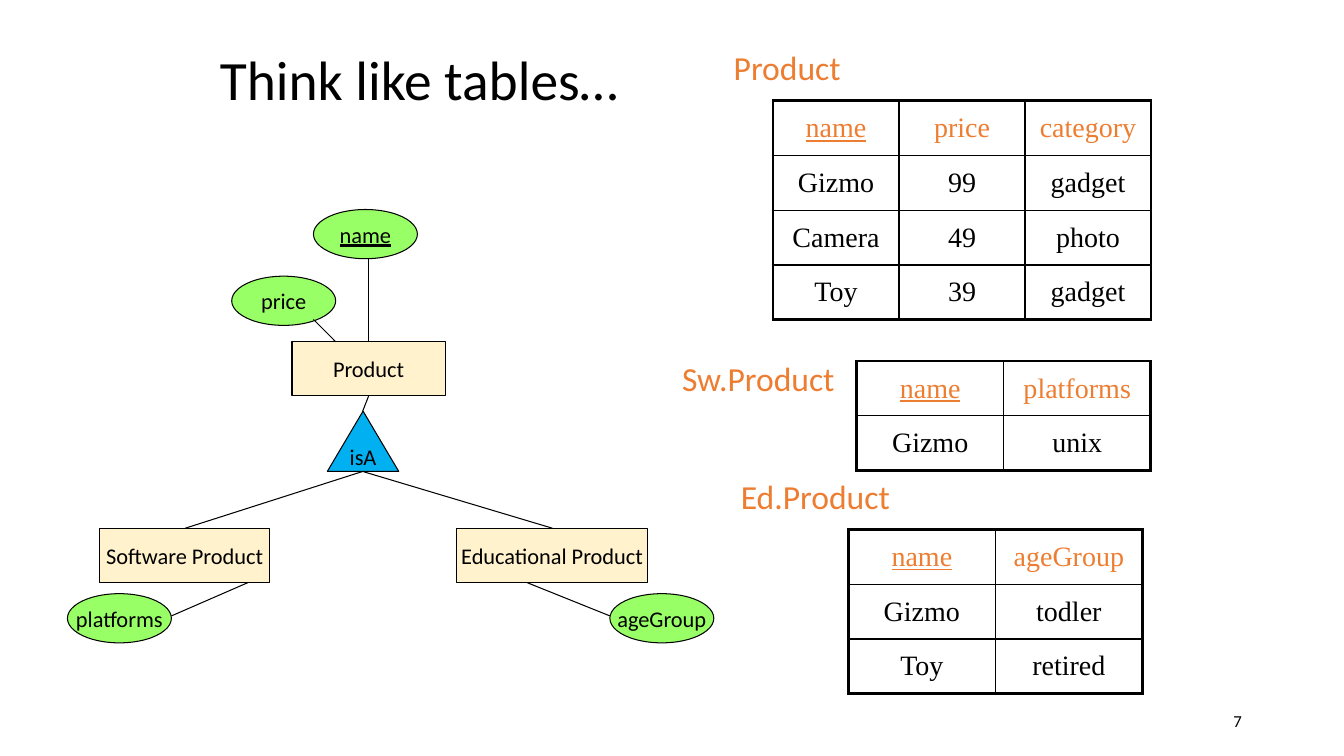
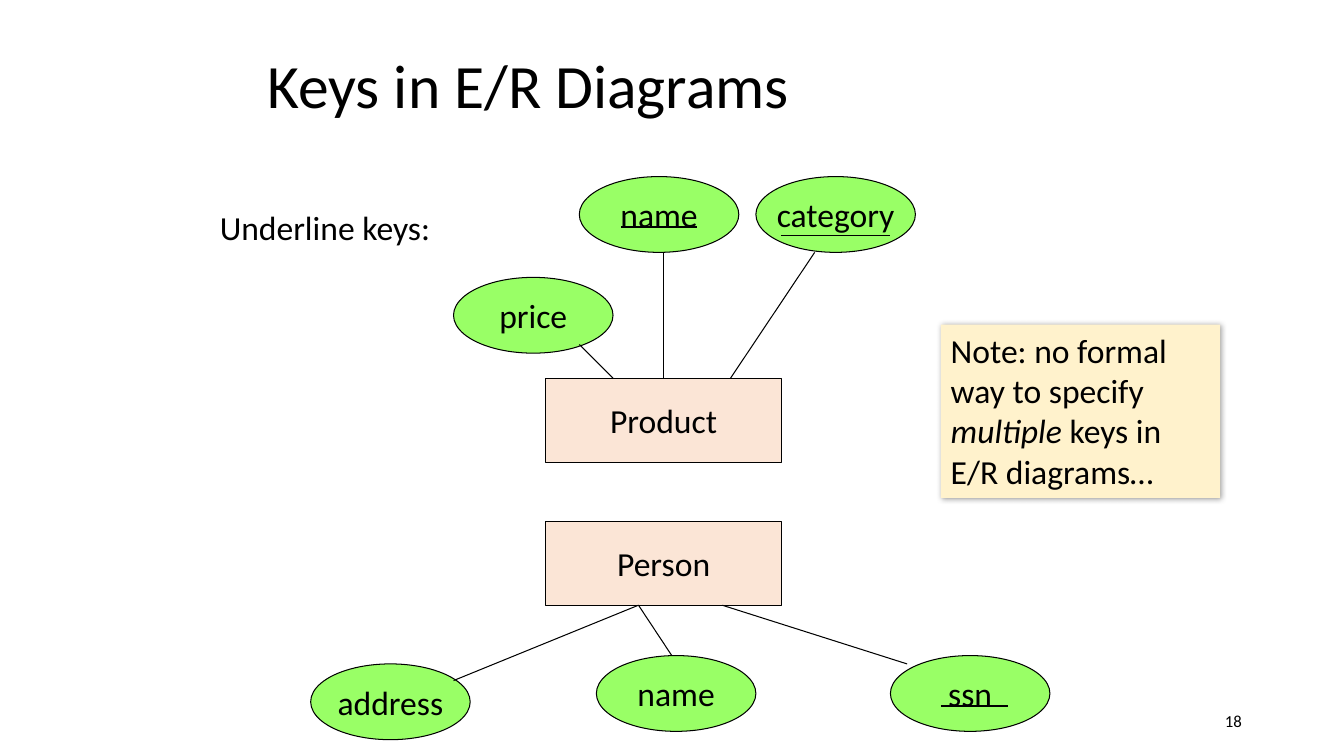
from dataclasses import dataclass

from lxml import etree
from pptx import Presentation
from pptx.dml.color import RGBColor
from pptx.enum.shapes import MSO_CONNECTOR, MSO_SHAPE
from pptx.enum.text import MSO_ANCHOR, PP_ALIGN
from pptx.oxml.ns import qn
from pptx.util import Cm, Pt

STRAIGHT = MSO_CONNECTOR.STRAIGHT
RECTANGLE, ELLIPSE, TRIANGLE = (
    MSO_SHAPE.RECTANGLE, MSO_SHAPE.OVAL, MSO_SHAPE.ISOSCELES_TRIANGLE)
LEFT, CENTER, RIGHT = PP_ALIGN.LEFT, PP_ALIGN.CENTER, PP_ALIGN.RIGHT
TOP, MIDDLE = MSO_ANCHOR.TOP, MSO_ANCHOR.MIDDLE


@dataclass(frozen=True)
class Theme:
    ink: str = "000000"
    accent: str = "ED7D31"
    attribute: str = "99FF66"
    cream: str = "FFF2CC"
    peach: str = "FBE5D6"
    relation: str = "00B0F0"
    font: str = "Calibri"
    table_font: str = "Times New Roman"
    title_size: float = 44
    small_title_size: float = 39.6
    label_size: float = 24
    table_size: float = 20
    node_size: float = 16
    page_number_size: float = 12
    thin_line: float = 0.75
    cell_line: float = 1
    frame_line: float = 2.25


THEME = Theme()


@dataclass(frozen=True)
class DiagramStyle:
    """Look of an E/R diagram; sizes are (width, height) in centimetres."""
    text_size: float
    entity_fill: str
    entity_size: tuple
    attribute_size: tuple
    relation_size: tuple = (1.8, 1.52)


COMPACT = DiagramStyle(THEME.node_size, THEME.cream, (3.86, 1.37), (2.62, 1.24))
LARGE = DiagramStyle(THEME.label_size, THEME.peach, (5.93, 2.12), (4.02, 1.91))


def lengths(*values):
    return [Cm(value) for value in values]


def write(frame, spans, size, align=LEFT, anchor=TOP, wrap=True,
          color=THEME.ink, font=THEME.font):
    """Fill a text frame with (text, font attributes) spans."""
    frame.word_wrap = wrap
    frame.vertical_anchor = anchor
    para = frame.paragraphs[0]
    para.alignment = align
    for text, extra in spans:
        span = para.add_run()
        span.text = text
        for name, value in {"name": font, "size": Pt(size), **extra}.items():
            setattr(span.font, name, value)
        span.font.color.rgb = RGBColor.from_string(color)
    return para


def add_text(page, box, text, size, **layout):
    frame = page.shapes.add_textbox(*lengths(*box)).text_frame
    return write(frame, [(text, {})], size, **layout), frame


def add_title(page, box, text, size, indent=0.25):
    para, frame = add_text(page, box, text, size, anchor=MIDDLE)
    para.line_spacing = 0.9
    frame.margin_left = Cm(indent)


def add_page_number(page, number):
    add_text(page, (23.93, 17.65, 7.62, 1.02), number, THEME.page_number_size,
             align=RIGHT, anchor=MIDDLE)


def add_label(page, box, text, color=THEME.accent):
    add_text(page, box, text, THEME.label_size, wrap=False, color=color)


def add_filled(page, kind, box, fill):
    shape = page.shapes.add_shape(kind, *lengths(*box))
    shape.shadow.inherit = False
    shape.fill.solid()
    shape.fill.fore_color.rgb = RGBColor.from_string(fill)
    shape.line.fill.background()
    return shape


def outline(line):
    line.color.rgb = RGBColor.from_string(THEME.ink)
    line.width = Pt(THEME.thin_line)


def add_diagram(page, origin, style, nodes, links):
    """Draw nodes (kind, text, x, y, options) and links (x1, y1, x2, y2)."""
    left, top = origin
    looks = {
        RECTANGLE: (style.entity_size, style.entity_fill),
        ELLIPSE: (style.attribute_size, THEME.attribute),
        TRIANGLE: (style.relation_size, THEME.relation),
    }
    for kind, text, x, y, options in nodes:
        (width, height), fill = looks[kind]
        width = options.get("width", width)
        shape = add_filled(page, kind, (left + x, top + y, width, height), fill)
        outline(shape.line)
        key = {"underline": True} if options.get("key") else {}
        write(shape.text_frame, [(text, key)], style.text_size,
              align=CENTER, anchor=MIDDLE, wrap=False)
    for x1, y1, x2, y2 in links:
        ends = lengths(left + x1, top + y1, left + x2, top + y2)
        link = page.shapes.add_connector(STRAIGHT, *ends)
        outline(link.line)
        etree.SubElement(link._element.spPr, qn("a:effectLst"))


def set_borders(cell, widths):
    """Draw cell edges, with widths in the order left, right, top, bottom."""
    properties = cell._tc.get_or_add_tcPr()
    for side, width in zip("LRTB", widths):
        edge = etree.SubElement(properties, qn(f"a:ln{side}"), w=str(Pt(width)))
        fill = etree.SubElement(edge, qn("a:solidFill"))
        etree.SubElement(fill, qn("a:srgbClr"), val=THEME.ink)


def add_relation_table(page, box, rows):
    """Table with a thick frame, an accent header and a key in column one."""
    left, top, width, row_height = box
    last_row, last_column = len(rows) - 1, len(rows[0]) - 1
    table = page.shapes.add_table(
        last_row + 1, last_column + 1,
        *lengths(left, top, width, row_height * len(rows))).table
    table.first_row = table.horz_banding = False
    for i, row in enumerate(rows):
        for j, text in enumerate(row):
            cell = table.cell(i, j)
            outer = (j == 0, j == last_column, i == 0, i == last_row)
            set_borders(cell, [THEME.frame_line if edge else THEME.cell_line
                               for edge in outer])
            cell.fill.background()
            cell.vertical_anchor = MIDDLE
            write(cell.text_frame, [(text, {"underline": i == j == 0})],
                  THEME.table_size, align=CENTER, anchor=MIDDLE,
                  color=THEME.ink if i else THEME.accent,
                  font=THEME.table_font)


def add_note(page, box, spans):
    note = add_filled(page, RECTANGLE, box, THEME.cream)
    effects = note._element.spPr.find(qn("a:effectLst"))
    shadow = etree.SubElement(effects, qn("a:outerShdw"), blurRad=str(Pt(4)),
                              dist=str(Pt(1)), dir="2700000", algn="tl")
    color = etree.SubElement(shadow, qn("a:srgbClr"), val=THEME.ink)
    etree.SubElement(color, qn("a:alpha"), val="40000")
    write(note.text_frame, spans, THEME.label_size)


def build_tables_page(page):
    add_page_number(page, "7")
    add_title(page, (5.29, 0.71, 13.34, 2.74), "Think like tables…",
              THEME.small_title_size)
    nodes = [
        (RECTANGLE, "Product", 5.66, 3.33, {}),
        (ELLIPSE, "name", 6.2, 0, {"key": True}),
        (ELLIPSE, "price", 4.14, 1.68, {}),
        (TRIANGLE, "isA", 6.55, 5.08, {}),
        (RECTANGLE, "Educational Product", 9.8, 8.03, {"width": 4.83}),
        (RECTANGLE, "Software Product", 0.81, 8.03, {"width": 4.29}),
        (ELLIPSE, "ageGroup", 13.67, 9.68, {}),
        (ELLIPSE, "platforms", 0, 9.68, {}),
    ]
    links = [
        (6.76, 3.33, 6.2, 2.77),
        (7.59, 3.33, 7.59, 1.24),
        (4.55, 9.4, 2.62, 10.24),
        (11.58, 9.4, 13.67, 10.24),
        (2.97, 8.03, 7.44, 6.6),
        (12.22, 8.03, 7.44, 6.6),
        (7.44, 5.08, 7.59, 4.7),
    ]
    add_diagram(page, (1.7, 5.28), COMPACT, nodes, links)
    relations = [
        ("Product", (18.24, 1.07, 3.23, 1.27), (19.48, 2.54, 9.53, 1.38),
         [("name", "price", "category"), ("Gizmo", "99", "gadget"),
          ("Camera", "49", "photo"), ("Toy", "39", "gadget")]),
        ("Sw.Product", (16.94, 8.89, 4.45, 1.27), (21.59, 9.1, 7.41, 1.38),
         [("name", "platforms"), ("Gizmo", "unix")]),
        ("Ed.Product", (18.42, 11.86, 4.29, 1.27), (21.38, 13.34, 7.41, 1.38),
         [("name", "ageGroup"), ("Gizmo", "todler"), ("Toy", "retired")]),
    ]
    for name, label_box, table_box, rows in relations:
        add_label(page, label_box, name)
        add_relation_table(page, table_box, rows)


def build_keys_page(page):
    add_page_number(page, "18")
    add_title(page, (6.14, 0.64, 21.59, 3.18), "Keys in E/R Diagrams",
              THEME.title_size, indent=0.6)
    nodes = [
        (ELLIPSE, "address", 0, 12.28, {}),
        (ELLIPSE, "name", 7.2, 12.07, {}),
        (ELLIPSE, "ssn", 14.61, 12.07, {}),
        (RECTANGLE, "Person", 5.93, 8.68, {}),
        (RECTANGLE, "Product", 5.93, 5.08, {}),
        (ELLIPSE, "name", 6.77, 0, {}),
        (ELLIPSE, "category", 11.22, 0, {}),
        (ELLIPSE, "price", 3.6, 2.54, {}),
    ]
    links = [
        (7.62, 5.08, 6.77, 4.23),
        (8.89, 5.08, 8.89, 1.91),
        (10.58, 5.08, 12.7, 1.91),
        (8.26, 10.8, 3.6, 12.7),
        (8.26, 10.8, 9.1, 12.07),
        (10.37, 10.8, 15.03, 12.28),
    ]
    key_underlines = [
        (7.83, 1.27, 9.74, 1.27),
        (11.85, 1.48, 14.61, 1.48),
        (15.88, 13.34, 17.57, 13.34),
    ]
    add_diagram(page, (7.83, 4.45), LARGE, nodes, links + key_underlines)
    add_label(page, (5.29, 5.08, 5.87, 1.27), "Underline keys:", THEME.ink)
    add_note(page, (23.71, 8.18, 7.04, 4.37), [
        ("Note: no formal way to specify ", {}),
        ("multiple", {"italic": True}),
        (" keys in E/R diagrams…", {}),
    ])


def main():
    deck = Presentation()
    deck.slide_width, deck.slide_height = lengths(33.87, 19.05)
    blank = deck.slide_layouts[6]
    for build in (build_tables_page, build_keys_page):
        build(deck.slides.add_slide(blank))
    deck.save("out.pptx")


if __name__ == "__main__":
    main()
